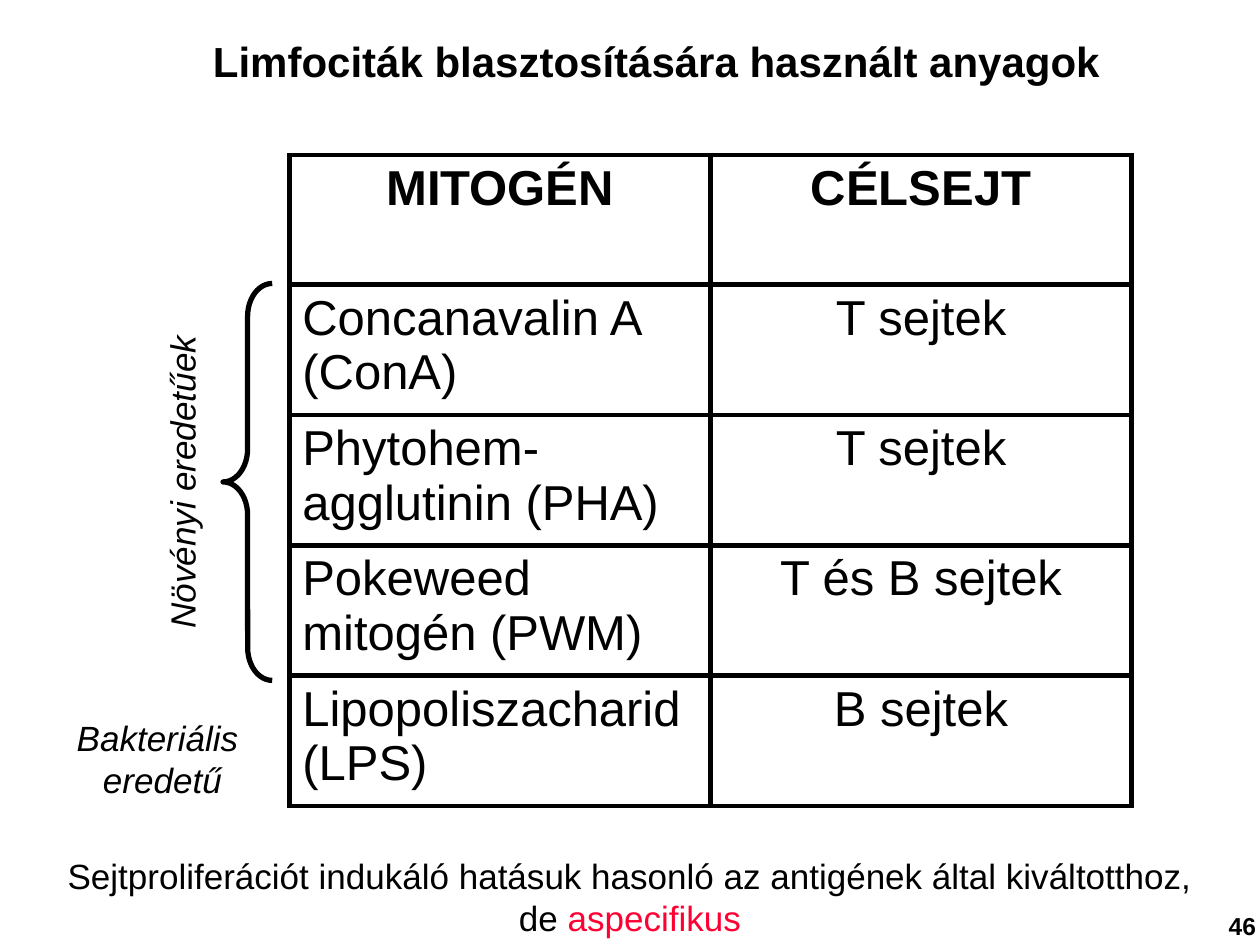
from dataclasses import dataclass
from typing import Any

from lxml.etree import SubElement
from pptx import Presentation
from pptx.dml.color import RGBColor
from pptx.enum.shapes import MSO_SHAPE
from pptx.enum.text import MSO_ANCHOR, MSO_AUTO_SIZE, PP_ALIGN
from pptx.oxml.ns import qn
from pptx.util import Inches, Pt

COLORS = {"ink": "000000", "accent": "FF0033", "paper": "FFFFFF"}
MITOGENS = [
    ("MITOGÉN", "CÉLSEJT"),
    ("Concanavalin A (ConA)", "T sejtek"),
    ("Phytohem-agglutinin (PHA)", "T sejtek"),
    ("Pokeweed mitogén (PWM)", "T és B sejtek"),
    ("Lipopoliszacharid (LPS)", "B sejtek"),
]


def color(name):
    """Return the named colour."""
    return RGBColor.from_string(COLORS[name])


@dataclass
class SlideBuilder:
    """Holds the style and the current slide."""

    page: Any
    font: str = "Arial"
    line_width: float = 3

    def add_lines(self, frame, lines, size, bold=False, italic=False, align=PP_ALIGN.LEFT):
        """Add lines, each a list of (text, colour) runs."""
        for index, spans in enumerate(lines):
            para = frame.add_paragraph() if index else frame.paragraphs[0]
            para.alignment = align
            for text, tint in spans:
                span = para.add_run()
                span.text = text
                span.font.name = self.font
                span.font.size = Pt(size)
                span.font.bold = bold
                span.font.italic = italic
                span.font.color.rgb = color(tint)

    def place(self, box, area, lines, size, **style):
        """Move a text shape to its area and fill it with lines."""
        box.left, box.top, box.width, box.height = (Inches(value) for value in area)
        frame = box.text_frame
        frame.word_wrap = False
        frame.auto_size = MSO_AUTO_SIZE.SHAPE_TO_FIT_TEXT
        frame.vertical_anchor = MSO_ANCHOR.TOP
        self.add_lines(frame, lines, size, **style)

    def title(self, area, text, size):
        """Format the title placeholder."""
        self.place(self.page.shapes.title, area, [[(text, "ink")]], size, bold=True)

    def label(self, area, lines, size, rotation=0, **style):
        """Add a text box."""
        box = self.page.shapes.add_textbox(0, 0, 0, 0)
        self.place(box, area, lines, size, **style)
        box.rotation = rotation

    def brace(self, area, curve):
        """Add an outlined left brace."""
        brace = self.page.shapes.add_shape(
            MSO_SHAPE.LEFT_BRACE, *(Inches(value) for value in area))
        brace.shadow.inherit = False
        brace.adjustments[0] = curve
        brace.fill.background()
        brace.line.color.rgb = color("ink")
        brace.line.width = Pt(self.line_width)

    def border(self, cell):
        """Draw all four borders of a cell."""
        properties = cell._tc.get_or_add_tcPr()
        for position, side in enumerate(("lnL", "lnR", "lnT", "lnB")):
            line = SubElement(properties, qn(f"a:{side}"), w=str(Pt(self.line_width)))
            fill = SubElement(line, qn("a:solidFill"))
            SubElement(fill, qn("a:srgbClr"), val=COLORS["ink"])
            properties.insert(position, line)

    def table(self, left, top, column_width, row_height, rows, size):
        """Add a ruled table with a bold heading row."""
        count, columns = len(rows), len(rows[0])
        grid = self.page.shapes.add_table(
            count, columns, Inches(left), Inches(top),
            Inches(column_width * columns), Inches(row_height * count)).table
        for row, texts in enumerate(rows):
            for column, text in enumerate(texts):
                cell = grid.cell(row, column)
                cell.fill.solid()
                cell.fill.fore_color.rgb = color("paper")
                self.border(cell)
                centred = row == 0 or column == 1
                self.add_lines(cell.text_frame, [[(text, "ink")]], size, bold=row == 0,
                               align=PP_ALIGN.CENTER if centred else PP_ALIGN.LEFT)


def main():
    """Build the mitogen slide."""
    deck = Presentation()
    deck.slide_width, deck.slide_height = Inches(10), Inches(7.5)
    builder = SlideBuilder(deck.slides.add_slide(deck.slide_layouts[5]))
    centre = PP_ALIGN.CENTER

    builder.title((1.59, 0.23, 7.24, 0.5), "Limfociták blasztosítására használt anyagok", 24)
    builder.table(2.3, 1.23, 3.34, 1.03, MITOGENS, 28)
    builder.brace((1.77, 2.25, 0.39, 3.15), 0.67)
    builder.label((0.18, 3.61, 2.52, 0.43), [[("Növényi eredetűek", "ink")]], 20,
                  rotation=270, italic=True)
    builder.label((0.51, 5.64, 1.56, 0.77),
                  [[("Bakteriális ", "ink")], [("eredetű", "ink")]], 20,
                  italic=True, align=centre)
    builder.label((0.41, 6.73, 9.18, 0.77), [
        [("Sejtproliferációt indukáló hatásuk hasonló az antigének által kiváltotthoz, ", "ink")],
        [("de", "ink"), (" aspecifikus", "accent")],
    ], 20, align=centre)
    builder.label((9.65, 7.18, 0.42, 0.33), [[("46", "ink")]], 14, bold=True, align=centre)
    deck.save("out.pptx")


if __name__ == "__main__":
    main()
